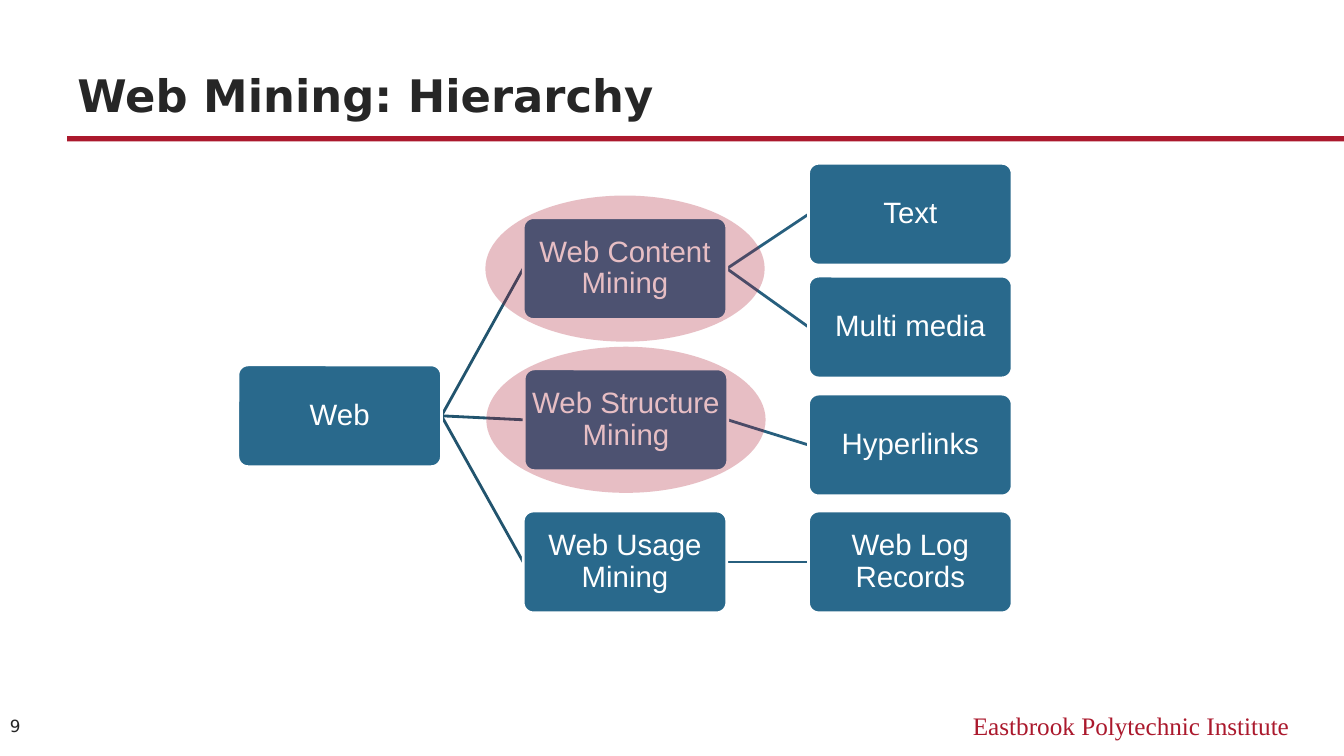
import pptx
import pptx.util
import pptx.dml.color
import pptx.enum.shapes
import pptx.enum.text
import pptx.oxml.ns
import lxml.etree

COLOURS = {
    "crimson": "AB192D",
    "node": "29698C",
    "root_link": "22546E",
    "leaf_link": "275F7E",
    "ink": "262626",
    "white": "FFFFFF",
}
ALIGN = pptx.enum.text.PP_ALIGN
ANCHOR = pptx.enum.text.MSO_ANCHOR
SHAPES = pptx.enum.shapes.MSO_SHAPE
NODE_SIZE = (15.15, 13.47)
HALO_SIZE = (20.78, 19.33)
LEVELS = (17.7, 38.93, 60.16)


def colour(name):
    return pptx.dml.color.RGBColor.from_string(COLOURS[name])


def apply(target, values):
    for key, value in values.items():
        setattr(target, key, value)


class HierarchySlide:
    """Draws on one slide, with lengths in percent of its width and height."""

    def __init__(self, deck):
        self.deck = deck
        self.slide = deck.slides.add_slide(deck.slide_layouts[5])
        self.shapes = self.slide.shapes

    def place(self, *lengths):
        sides = (self.deck.slide_width, self.deck.slide_height) * 2
        return [round(side * length / 100) for side, length in zip(sides, lengths)]

    def letter(self, holder, words, size, font, ink, bold=False, align=ALIGN.LEFT,
               anchor=ANCHOR.MIDDLE, spacing=1.0, inset=(0.1, 0.05)):
        frame = holder.text_frame
        across, down = map(pptx.util.Inches, inset)
        frame.text = words
        apply(frame, {
            "word_wrap": True,
            "auto_size": pptx.enum.text.MSO_AUTO_SIZE.NONE,
            "vertical_anchor": anchor,
            "margin_left": across, "margin_right": across,
            "margin_top": down, "margin_bottom": down,
        })
        line = frame.paragraphs[0]
        apply(line, {"alignment": align, "line_spacing": spacing})
        run = line.runs[0]
        apply(run.font, {"size": pptx.util.Pt(size), "name": font, "bold": bold})
        run.font.color.rgb = colour(ink)

    def title(self, words, box, **style):
        heading = self.shapes.title
        apply(heading, dict(zip(("left", "top", "width", "height"), self.place(*box))))
        self.letter(heading, words, **style)

    def label(self, words, box, **style):
        self.letter(self.shapes.add_textbox(*self.place(*box)), words, **style)

    def shape(self, kind, box, fill):
        figure = self.shapes.add_shape(kind, *self.place(*box))
        figure.shadow.inherit = False
        figure.fill.solid()
        figure.fill.fore_color.rgb = colour(fill)
        figure.line.fill.background()
        return figure

    def node(self, words, left, top):
        card = self.shape(SHAPES.ROUNDED_RECTANGLE, (left, top, *NODE_SIZE), "node")
        card.adjustments[0] = 0.1
        card.line.color.rgb = colour("white")
        card.line.width = pptx.util.Pt(2)
        self.letter(card, words, 21, "Arial", "white", align=ALIGN.CENTER,
                    spacing=0.9, inset=(0.01, 0.01))

    def link(self, parent, child, ink):
        width, height = NODE_SIZE
        ends = (parent[0] + width, parent[1] + height / 2, child[0], child[1] + height / 2)
        branch = self.shapes.add_connector(
            pptx.enum.shapes.MSO_CONNECTOR.STRAIGHT, *self.place(*ends))
        branch.line.color.rgb = colour(ink)
        branch.line.width = pptx.util.Pt(2)
        lxml.etree.SubElement(branch._element.spPr, pptx.oxml.ns.qn("a:effectLst"))

    def halo(self, left, top):
        corner = [start + (inner - outer) / 2 for start, inner, outer
                  in zip((left, top), NODE_SIZE, HALO_SIZE)]
        glow = self.shape(SHAPES.OVAL, (*corner, *HALO_SIZE), "crimson")
        tint = glow._element.spPr.find(".//" + pptx.oxml.ns.qn("a:srgbClr"))
        lxml.etree.SubElement(tint, pptx.oxml.ns.qn("a:alpha"), val="28000")


def main():
    deck = pptx.Presentation()
    deck.slide_width = pptx.util.Inches(13.33)
    deck.slide_height = pptx.util.Inches(7.5)
    page = HierarchySlide(deck)

    page.title("Web Mining: Hierarchy", (5, 5.07, 90, 11.73), size=32,
               font="DejaVu Sans", ink="ink", bold=True, anchor=ANCHOR.BOTTOM)
    page.shape(SHAPES.RECTANGLE, (5, 18, 95, 0.7), "crimson")
    page.label("Eastbrook Polytechnic Institute", (60, 93.33, 36.67, 5.33), size=18,
               font="Times New Roman", ink="crimson", align=ALIGN.RIGHT,
               anchor=ANCHOR.TOP)
    page.label("9", (0, 93.2, 5, 5.73), size=12, font="DejaVu Sans", ink="ink")

    root, branch, leaf = LEVELS
    places = {
        "Web": (root, 48.27),
        "Web Content Mining": (branch, 28.8),
        "Web Structure Mining": (branch + 0.07, 48.8),
        "Web Usage Mining": (branch, 67.6),
        "Text": (leaf, 21.6),
        "Multi media": (leaf, 36.53),
        "Hyperlinks": (leaf, 52.13),
        "Web Log Records": (leaf, 67.6),
    }
    hierarchy = {
        "Web": ("Web Content Mining", "Web Structure Mining", "Web Usage Mining"),
        "Web Content Mining": ("Text", "Multi media"),
        "Web Structure Mining": ("Hyperlinks",),
        "Web Usage Mining": ("Web Log Records",),
    }
    for parent, children in hierarchy.items():
        ink = "root_link" if parent == "Web" else "leaf_link"
        for child in children:
            page.link(places[parent], places[child], ink)
    for topic, spot in places.items():
        page.node(topic, *spot)
    for topic in ("Web Structure Mining", "Web Content Mining"):
        page.halo(*places[topic])

    deck.save("out.pptx")


if __name__ == "__main__":
    main()
